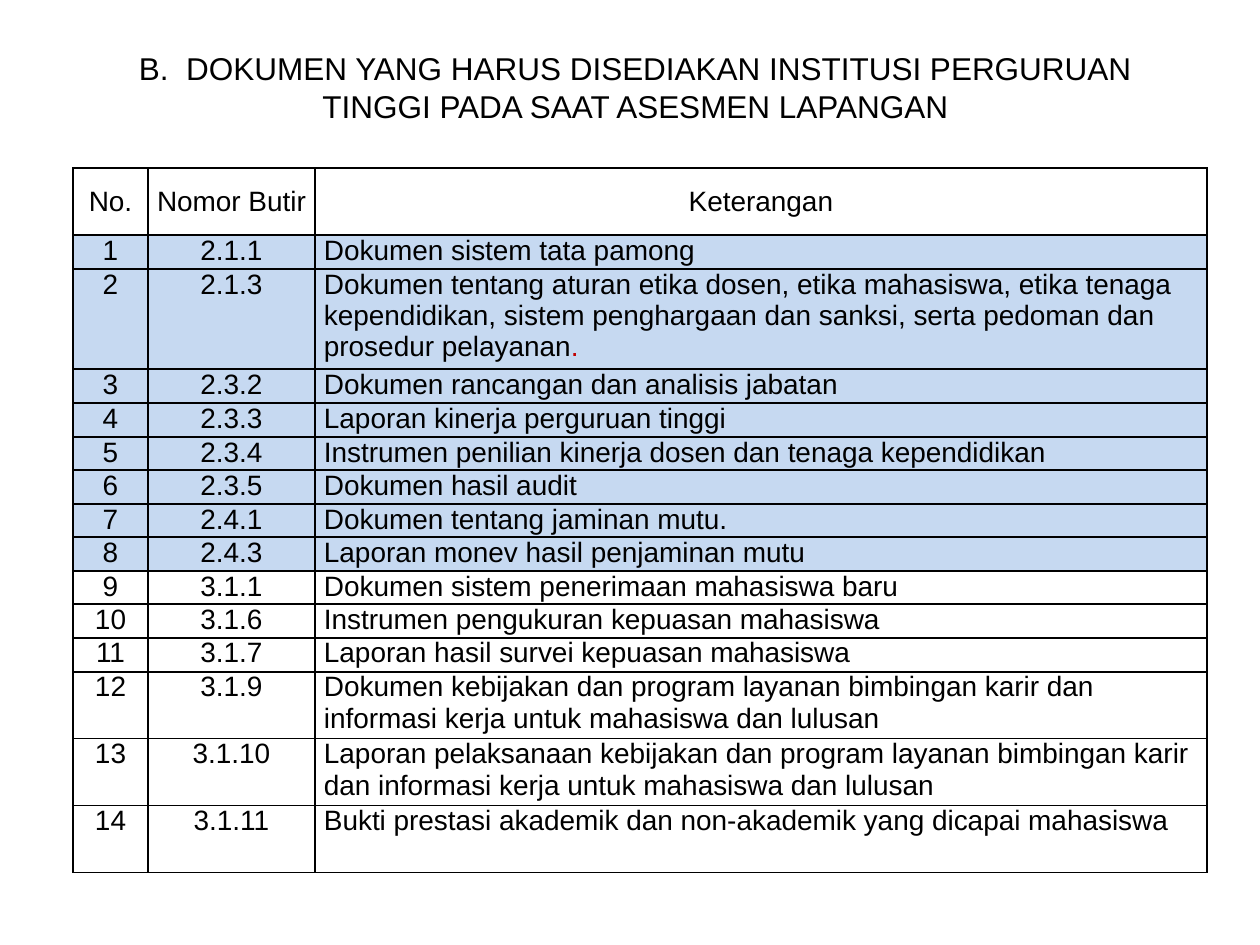
from dataclasses import dataclass
from itertools import accumulate, pairwise

from lxml.etree import SubElement
from pptx import Presentation
from pptx.dml.color import RGBColor as Rgb
from pptx.enum.text import MSO_ANCHOR as Anchor, MSO_AUTO_SIZE as AutoSize, PP_ALIGN as Align
from pptx.oxml.ns import qn
from pptx.util import Emu, Pt

PX = 914400 // 126


@dataclass(frozen=True)
class Theme:
    font: str = "Arial"
    title_size: int = 18
    table_size: int = 16
    border_width: int = 1
    ink: str = "000000"
    accent: str = "C00000"
    highlight: str = "C6D9F1"


THEME = Theme()
TITLE = "B.  DOKUMEN YANG HARUS DISEDIAKAN INSTITUSI PERGURUAN TINGGI PADA SAAT ASESMEN LAPANGAN"
HEADINGS = ("No.", "Nomor Butir", "Keterangan")
DOCUMENTS = [
    ("2.1.1", "Dokumen sistem tata pamong", 1),
    ("2.1.3", "Dokumen tentang aturan etika dosen, etika mahasiswa, etika tenaga kependidikan, "
              "sistem penghargaan dan sanksi, serta pedoman dan prosedur pelayanan", 3),
    ("2.3.2", "Dokumen rancangan dan analisis jabatan", 1),
    ("2.3.3", "Laporan kinerja perguruan tinggi", 1),
    ("2.3.4", "Instrumen penilian kinerja dosen dan tenaga kependidikan", 1),
    ("2.3.5", "Dokumen hasil audit", 1),
    ("2.4.1", "Dokumen tentang jaminan mutu.", 1),
    ("2.4.3", "Laporan monev hasil penjaminan mutu", 1),
    ("3.1.1", "Dokumen sistem penerimaan mahasiswa baru", 1),
    ("3.1.6", "Instrumen pengukuran kepuasan mahasiswa", 1),
    ("3.1.7", "Laporan hasil survei kepuasan mahasiswa", 1),
    ("3.1.9", "Dokumen kebijakan dan program layanan bimbingan karir dan informasi kerja "
              "untuk mahasiswa dan lulusan", 2),
    ("3.1.10", "Laporan pelaksanaan kebijakan dan program layanan bimbingan karir dan informasi "
               "kerja untuk mahasiswa dan lulusan", 2),
    ("3.1.11", "Bukti prestasi akademik dan non-akademik yang dicapai mahasiswa", 2),
]
HEADING_UNITS = 2
RED_STOP_BUTIR = "2.1.3"
HIGHLIGHTED_STANDARD = "2."
COLUMN_WIDTHS = (75, 167, 892)


def px(length):
    return Emu(length * PX)


def add_span(para, text, size, color=THEME.ink):
    span = para.add_run()
    span.text = text
    span.font.name = THEME.font
    span.font.size = Pt(size)
    span.font.color.rgb = Rgb.from_string(color)


def add_title(page, left, top, width, height):
    box = page.shapes.add_textbox(px(left), px(top), px(width), px(height))
    frame = box.text_frame
    frame.word_wrap = True
    frame.auto_size = AutoSize.NONE
    frame.vertical_anchor = Anchor.MIDDLE
    frame.margin_bottom = px(44)
    para = frame.paragraphs[0]
    para.alignment = Align.CENTER
    add_span(para, TITLE, THEME.title_size)


def draw_borders(cell):
    properties = cell._tc.get_or_add_tcPr()
    for index, side in enumerate(("lnL", "lnR", "lnT", "lnB")):
        line = SubElement(properties, qn(f"a:{side}"), w=str(Pt(THEME.border_width)))
        fill = SubElement(line, qn("a:solidFill"))
        SubElement(fill, qn("a:srgbClr"), val=THEME.ink)
        properties.insert(index, line)


def fill_cell(cell, text, alignment, anchor, highlighted):
    cell.margin_left = cell.margin_right = px(9)
    cell.margin_top = cell.margin_bottom = 0
    cell.vertical_anchor = anchor
    if highlighted:
        cell.fill.solid()
        cell.fill.fore_color.rgb = Rgb.from_string(THEME.highlight)
    else:
        cell.fill.background()
    draw_borders(cell)
    para = cell.text_frame.paragraphs[0]
    para.alignment = alignment
    add_span(para, text, THEME.table_size)
    return para


def add_document_table(page, left, top, width, height):
    frame = page.shapes.add_table(len(DOCUMENTS) + 1, len(HEADINGS),
                                  px(left), px(top), px(width), px(height))
    table = frame.table
    table.first_row = table.horz_banding = False
    for column, column_width in zip(table.columns, COLUMN_WIDTHS):
        column.width = px(column_width)

    units = [HEADING_UNITS] + [lines for _, _, lines in DOCUMENTS]
    edges = [round(height * count / sum(units)) for count in accumulate(units, initial=0)]
    for row, (start, end) in zip(table.rows, pairwise(edges)):
        row.height = px(end - start)

    for column, heading in enumerate(HEADINGS):
        fill_cell(table.cell(0, column), heading, Align.CENTER, Anchor.MIDDLE, False)
    alignments = (Align.CENTER, Align.CENTER, Align.LEFT)
    for number, (butir, description, _) in enumerate(DOCUMENTS, 1):
        highlighted = butir.startswith(HIGHLIGHTED_STANDARD)
        for column, text in enumerate((str(number), butir, description)):
            para = fill_cell(table.cell(number, column), text, alignments[column],
                             Anchor.TOP, highlighted)
        if butir == RED_STOP_BUTIR:
            add_span(para, ".", THEME.table_size, THEME.accent)


def main():
    deck = Presentation()
    deck.slide_width, deck.slide_height = px(1260), px(945)
    page = deck.slides.add_slide(deck.slide_layouts[6])
    add_document_table(page, 73, 168, sum(COLUMN_WIDTHS), 705)
    add_title(page, 105, 42, 1061, 127)
    deck.save("out.pptx")


if __name__ == "__main__":
    main()
